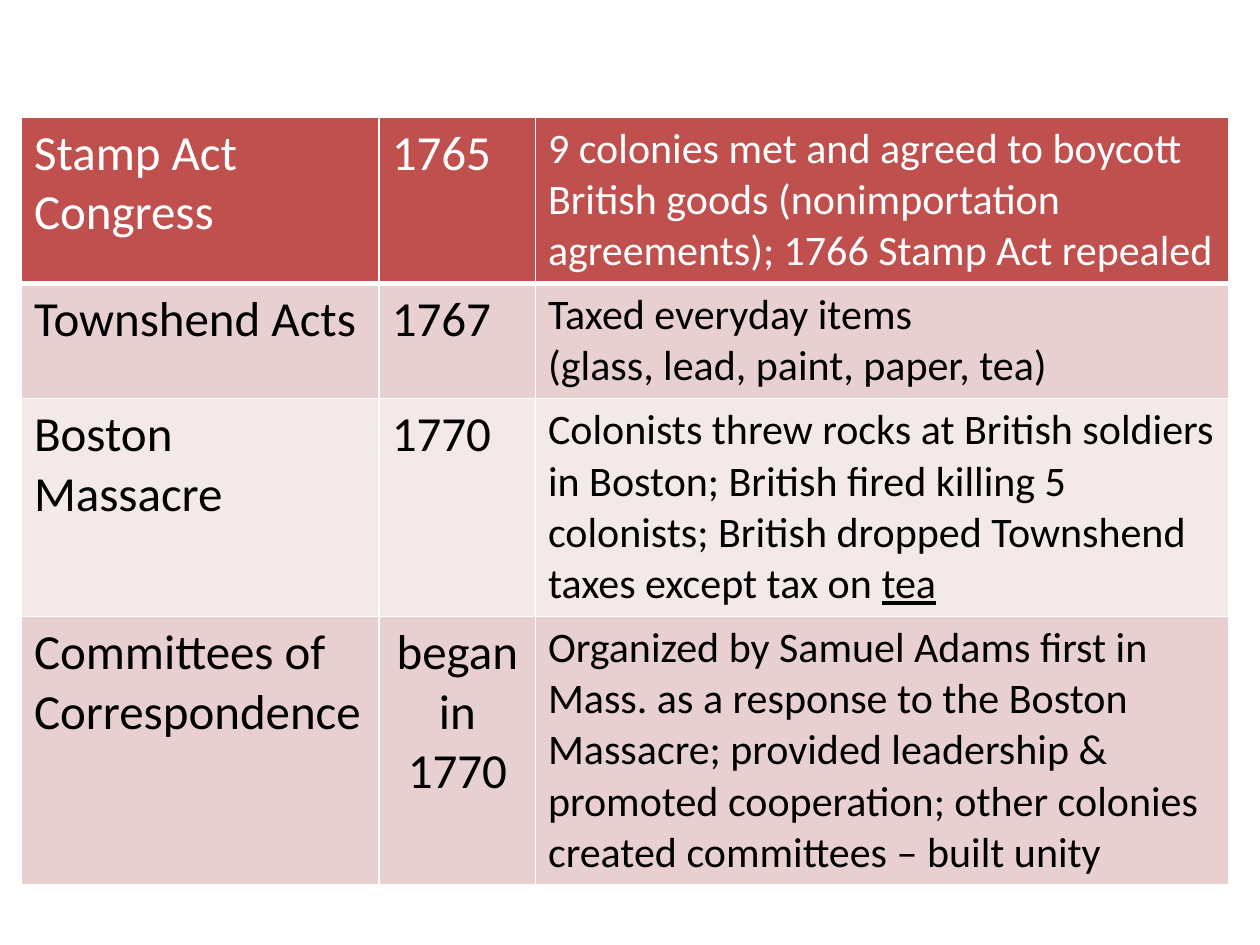
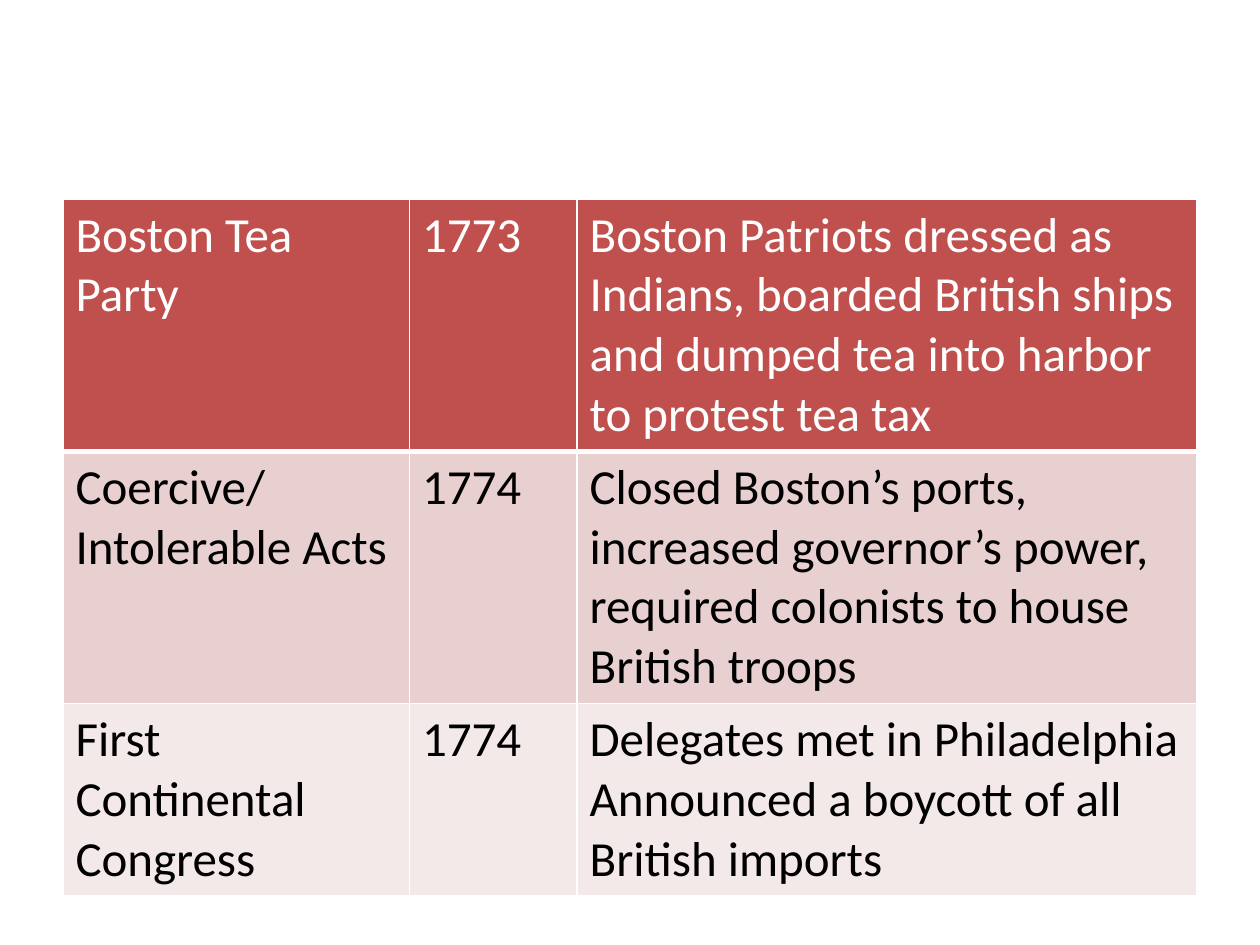
from dataclasses import dataclass

from lxml.etree import SubElement
from pptx import Presentation
from pptx.dml.color import RGBColor
from pptx.enum.text import PP_ALIGN
from pptx.oxml.ns import qn
from pptx.util import Inches, Pt


@dataclass(frozen=True)
class Theme:
    font: str = "Calibri"
    large: int = 28
    small: int = 24
    header: str = "C0504D"
    bands: tuple = ("E8D0D0", "F4E9E9")
    white: str = "FFFFFF"
    black: str = "000000"
    rule: int = 1
    header_rule: int = 3


T = Theme()
ROW_HEIGHT = 0.41

TIMELINES = [
    {
        "left": 0.17, "top": 0.93, "cols": (2.84, 1.24, 5.5),
        "detail_size": T.small, "centred": {"began in 1770"}, "underlined": {"tea"},
        "rows": [
            ("Stamp Act Congress", "1765",
             "9 colonies met and agreed to boycott British goods (nonimportation "
             "agreements); 1766 Stamp Act repealed"),
            ("Townshend Acts", "1767",
             "Taxed everyday items\n(glass, lead, paint, paper, tea)"),
            ("Boston Massacre", "1770",
             ("Colonists threw rocks at British soldiers in Boston; British fired killing 5 "
              "colonists; British dropped Townshend taxes except tax on ", "tea")),
            ("Committees of Correspondence", "began in 1770",
             "Organized by Samuel Adams first in Mass. as a response to the Boston Massacre; "
             "provided leadership & promoted cooperation; other colonies created committees "
             "– built unity"),
        ],
    },
    {
        "left": 0.5, "top": 1.58, "cols": (2.75, 1.33, 4.92),
        "detail_size": T.large, "centred": set(), "underlined": set(),
        "rows": [
            ("Boston Tea Party", "1773",
             "Boston Patriots dressed as Indians, boarded British ships and dumped tea into "
             "harbor to protest tea tax"),
            ("Coercive/\nIntolerable Acts", "1774",
             "Closed Boston’s ports, increased governor’s power, required colonists to house "
             "British troops"),
            ("First\nContinental Congress", "1774",
             "Delegates met in Philadelphia\nAnnounced a boycott of all British imports"),
        ],
    },
]


def write(tf, text, *, size, color, align=PP_ALIGN.LEFT, underlined=()):
    parts = text if isinstance(text, tuple) else (text,)
    p = tf.paragraphs[0]
    p.alignment = align
    for part in parts:
        for i, line in enumerate(part.split("\n")):
            if i:
                p = tf.add_paragraph()
                p.alignment = align
            r = p.add_run()
            r.text = line
            r.font.name = T.font
            r.font.size = Pt(size)
            r.font.bold = False
            r.font.color.rgb = RGBColor.from_string(color)
            if line in underlined:
                r.font.underline = True


def style_cell(cell, fill, bottom):
    tcPr = cell._tc.get_or_add_tcPr()
    for side, width in (("L", T.rule), ("R", T.rule), ("T", T.rule), ("B", bottom)):
        ln = SubElement(tcPr, qn(f"a:ln{side}"), w=str(Pt(width)))
        SubElement(SubElement(ln, qn("a:solidFill")), qn("a:srgbClr"), val=T.white)
    cell.fill.solid()
    cell.fill.fore_color.rgb = RGBColor.from_string(fill)


def add_timeline(prs, timeline):
    s = prs.slides.add_slide(prs.slide_layouts[6])
    rows, cols = timeline["rows"], timeline["cols"]
    table = s.shapes.add_table(
        len(rows), len(cols), Inches(timeline["left"]), Inches(timeline["top"]),
        Inches(sum(cols)), Inches(ROW_HEIGHT * len(rows))).table
    table.first_row = table.horz_banding = False
    for column, width in zip(table.columns, cols):
        column.width = Inches(width)
    sizes = (T.large, T.large, timeline["detail_size"])
    for i, row in enumerate(rows):
        header = i == 0
        fill = T.header if header else T.bands[(i - 1) % 2]
        for j, text in enumerate(row):
            cell = table.cell(i, j)
            style_cell(cell, fill, T.header_rule if header else T.rule)
            write(cell.text_frame, text, size=sizes[j],
                  color=T.white if header else T.black,
                  align=PP_ALIGN.CENTER if text in timeline["centred"] else PP_ALIGN.LEFT,
                  underlined=timeline["underlined"])


def main():
    prs = Presentation()
    prs.slide_width, prs.slide_height = Inches(10), Inches(7.5)
    for timeline in TIMELINES:
        add_timeline(prs, timeline)
    prs.save("out.pptx")


if __name__ == "__main__":
    main()
